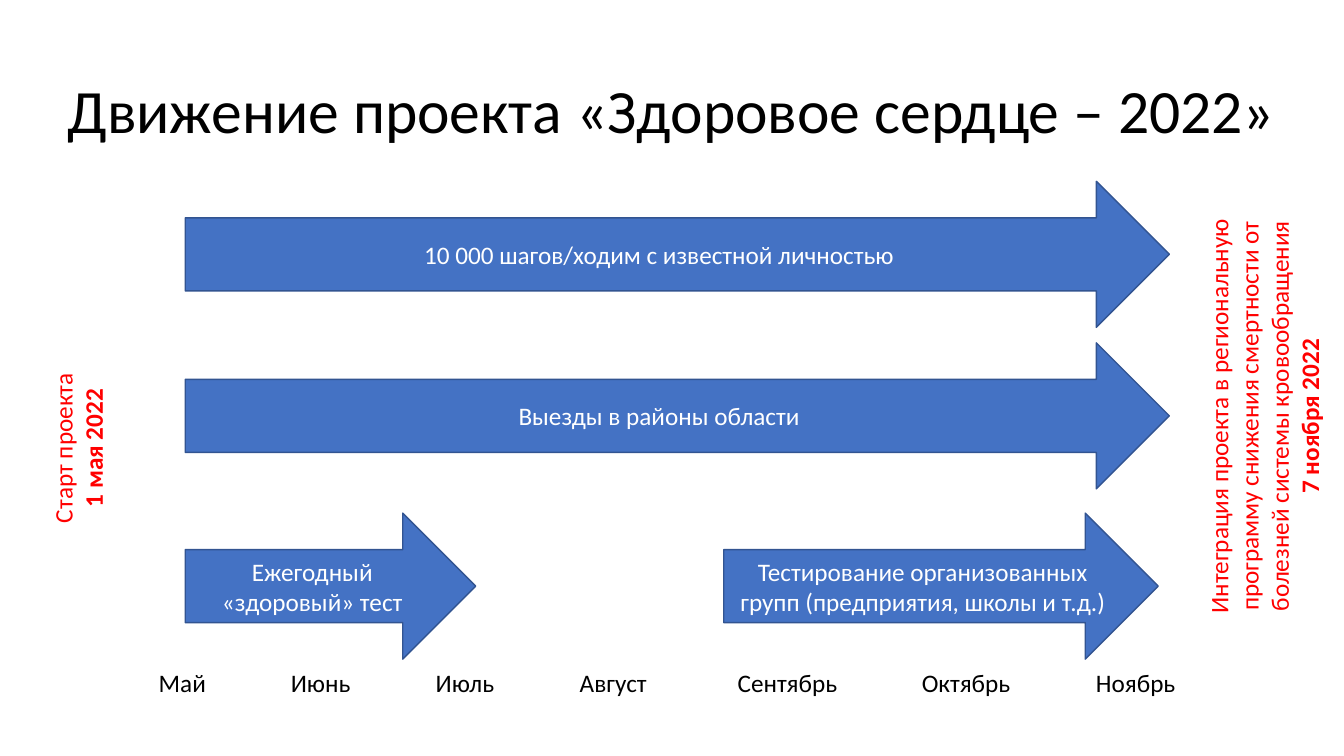
"""Build the timeline slide of the healthy heart project."""
from lxml.etree import SubElement
from pptx import Presentation
from pptx.dml.color import RGBColor
from pptx.enum.shapes import MSO_SHAPE
from pptx.enum.text import MSO_ANCHOR, MSO_AUTO_SIZE, PP_ALIGN
from pptx.oxml.ns import qn
from pptx.util import Cm, Pt

COLORS = {
    "text": "000000",
    "accent": "FF0000",
    "arrow": "4472C4",
    "outline": "325491",
    "arrow_text": "FFFFFF",
}
FONT = "Calibri"
ARROW_LEFT = 4.67
ARROW_HEIGHT = 3.68
ARROWS = [
    ("10 000 шагов/ходим с известной личностью", ARROW_LEFT, 4.57, 24.8),
    ("Выезды в районы области", ARROW_LEFT, 8.64, 24.8),
    ("Ежегодный «здоровый» тест", ARROW_LEFT, 12.93, 7.32),
    ("Тестирование организованных групп (предприятия, школы и т.д.)",
     18.24, 12.93, 10.95),
]
MONTH_STARTS = {
    "Май": 1.41,
    "Июнь": 4.74,
    "Июль": 8.39,
    "Август": 12.02,
    "Сентябрь": 16,
    "Октябрь": 20.64,
    "Ноябрь": 25.03,
}
MILESTONES = [
    ("Старт проекта", "1 мая 2022", (1.07, 7.47, 2.06, 7.65)),
    ("Интеграция проекта в региональную программу снижения смертности "
     "от болезней системы кровообращения", "7 ноября 2022",
     (30.2, 4.29, 3.58, 12.4)),
]


def color(name):
    """Return the named colour."""
    return RGBColor.from_string(COLORS[name])


def write(paragraph, text, size=18, ink="text", bold=False,
          align=PP_ALIGN.CENTER):
    """Write formatted text into a paragraph."""
    paragraph.alignment = align
    run = paragraph.add_run()
    run.text = text
    run.font.name = FONT
    run.font.size = Pt(size)
    run.font.bold = bold
    run.font.color.rgb = color(ink)


def add_text_frame(slide, box):
    """Add a wrapping text box and return its text frame."""
    frame = slide.shapes.add_textbox(*map(Cm, box)).text_frame
    frame.word_wrap = True
    return frame


def set_title(slide, text):
    """Place and fill the title placeholder."""
    title = slide.shapes.title
    title.left, title.top = Cm(0), Cm(1.01)
    title.width, title.height = Cm(33.87), Cm(3.68)
    frame = title.text_frame
    frame.auto_size = MSO_AUTO_SIZE.NONE
    frame.vertical_anchor = MSO_ANCHOR.MIDDLE
    paragraph = frame.paragraphs[0]
    paragraph.line_spacing = 0.9
    write(paragraph, text, size=44)


def add_months(slide):
    """Add the month axis, aligned by tab stops."""
    frame = add_text_frame(slide, (2.34, 16.69, 29.13, 1.02))
    paragraph = frame.paragraphs[0]
    write(paragraph, "".join(f"\t{month}" for month in MONTH_STARTS),
          align=PP_ALIGN.LEFT)
    tab_list = SubElement(paragraph._p.get_or_add_pPr(), qn("a:tabLst"))
    for start in MONTH_STARTS.values():
        SubElement(tab_list, qn("a:tab"), pos=str(Cm(start)), algn="l")


def add_milestone(slide, text, date, box):
    """Add a milestone that reads from bottom to top."""
    frame = add_text_frame(slide, box)
    frame._txBody.bodyPr.set("vert", "vert270")
    write(frame.paragraphs[0], text, ink="accent")
    write(frame.add_paragraph(), date, ink="accent", bold=True)


def add_arrow(slide, text, left, top, width):
    """Add a labelled block arrow for one activity."""
    arrow = slide.shapes.add_shape(MSO_SHAPE.RIGHT_ARROW, Cm(left), Cm(top),
                                   Cm(width), Cm(ARROW_HEIGHT))
    arrow.shadow.inherit = False
    arrow.fill.solid()
    arrow.fill.fore_color.rgb = color("arrow")
    arrow.line.color.rgb = color("outline")
    arrow.line.width = Pt(1)
    frame = arrow.text_frame
    frame.word_wrap = True
    frame.vertical_anchor = MSO_ANCHOR.MIDDLE
    write(frame.paragraphs[0], text, ink="arrow_text")


def main():
    """Build and save the presentation."""
    presentation = Presentation()
    presentation.slide_width = Cm(33.87)
    presentation.slide_height = Cm(19.05)
    slide = presentation.slides.add_slide(presentation.slide_layouts[5])
    set_title(slide, "Движение проекта «Здоровое сердце – 2022»")
    add_months(slide)
    for milestone in MILESTONES:
        add_milestone(slide, *milestone)
    for arrow in ARROWS:
        add_arrow(slide, *arrow)
    presentation.save("out.pptx")


if __name__ == "__main__":
    main()
